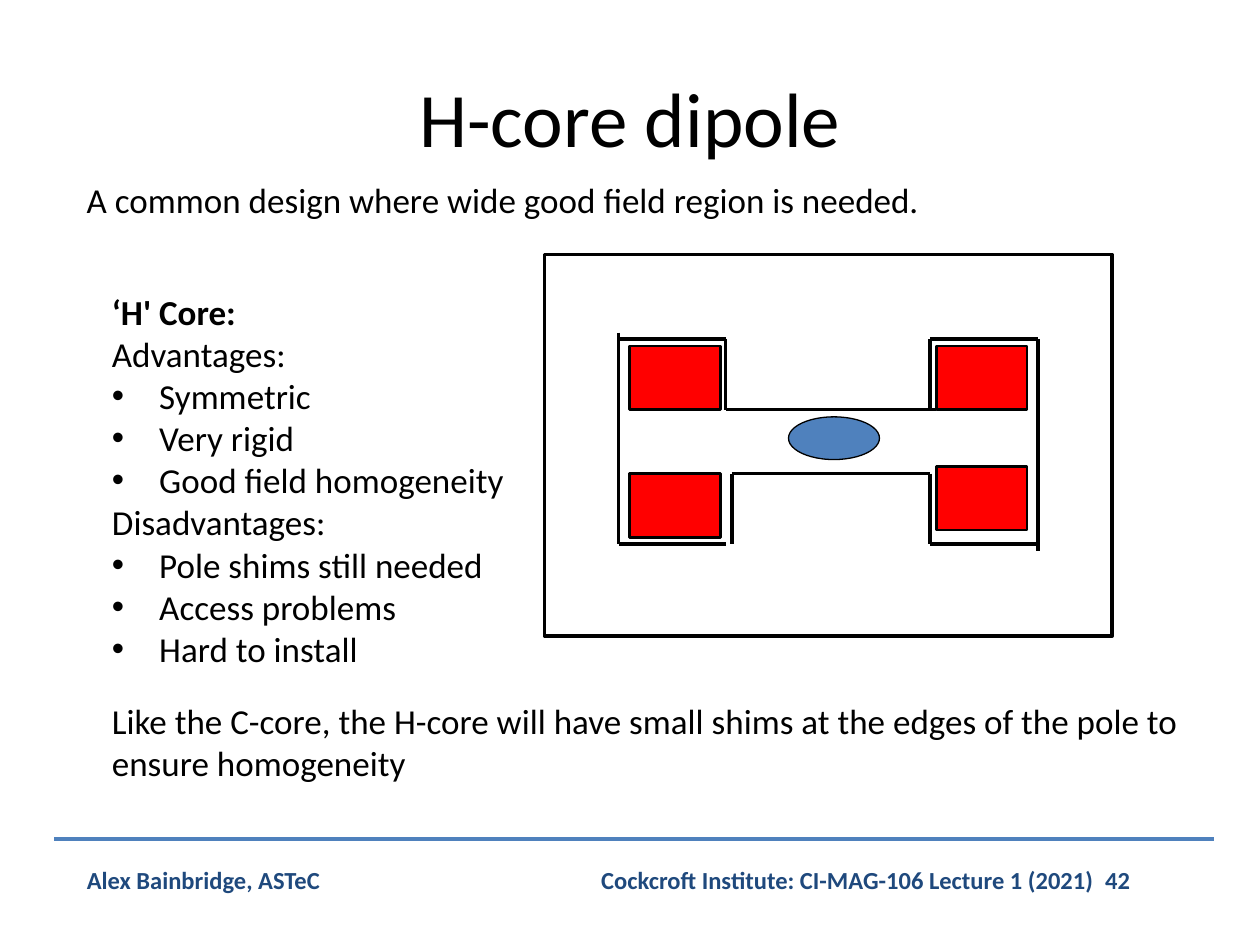
from lxml import etree
from pptx import Presentation
from pptx import util as u
from pptx.dml.color import RGBColor
from pptx.enum import shapes, text
from pptx.oxml.ns import qn

Pt = u.Pt
COLORS = {"ink": "000000", "footer": "1F497D", "accent": "4F81BD", "coil": "FF0000"}
BULLET_INDENT = Pt(27)

presentation = Presentation()
presentation.slide_width, presentation.slide_height = Pt(720), Pt(540)
slide = presentation.slides.add_slide(presentation.slide_layouts[5])


def write(frame, lines, size=20, color="ink", bold_lines=(), bullet_lines=(),
          align=text.PP_ALIGN.LEFT):
    frame.word_wrap = True
    for index, line in enumerate(lines):
        paragraph = frame.paragraphs[0] if index == 0 else frame.add_paragraph()
        paragraph.alignment = align
        run = paragraph.add_run()
        run.text = line
        run.font.name = "Calibri"
        run.font.size = Pt(size)
        run.font.bold = line in bold_lines
        run.font.color.rgb = RGBColor.from_string(COLORS[color])
        if line in bullet_lines:
            properties = paragraph._p.get_or_add_pPr()
            properties.set("marL", str(BULLET_INDENT))
            properties.set("indent", str(-BULLET_INDENT))
            etree.SubElement(properties, qn("a:buFont")).set("typeface", "Arial")
            etree.SubElement(properties, qn("a:buChar")).set("char", "•")


def draw_line(start, end, color="ink"):
    line = slide.shapes.add_connector(
        shapes.MSO_CONNECTOR.STRAIGHT, *[Pt(value) for value in (*start, *end)])
    line.line.width = Pt(2)
    line.line.color.rgb = RGBColor.from_string(COLORS[color])
    etree.SubElement(line._element.spPr, qn("a:effectLst"))


title = slide.shapes.title
title.left, title.top, title.width, title.height = Pt(36), Pt(21.6), Pt(648), Pt(90)
title.text_frame.vertical_anchor = text.MSO_ANCHOR.MIDDLE
write(title.text_frame, ["H-core dipole"], size=44, align=text.PP_ALIGN.CENTER)

advantages = ["Symmetric", "Very rigid", "Good field homogeneity"]
disadvantages = ["Pole shims still needed", "Access problems", "Hard to install"]
heading = "‘H' Core:"
author = "Alex Bainbridge, ASTeC"
lecture = "Cockcroft Institute: CI-MAG-106 Lecture 1 (2021)\t42"
footer = {"size": 14, "color": "footer", "bold_lines": [author, lecture]}

text_boxes = [
    ((42.5, 98.6, 629, 31.5),
     ["A common design where wide good field region is needed."], {}),
    ((56.9, 162.7, 278, 225.4),
     [heading, "Advantages:", *advantages, "Disadvantages:", *disadvantages],
     {"bold_lines": [heading], "bullet_lines": advantages + disadvantages}),
    ((56.9, 396, 626.4, 55.5),
     ["Like the C-core, the H-core will have small shims at the edges of the pole "
      "to ensure homogeneity"], {}),
    ((42.5, 491, 278, 24.5), [author], footer),
    ((295.2, 491, 398.9, 24.5), [lecture], {**footer, "align": text.PP_ALIGN.CENTER}),
]
for box, lines, options in text_boxes:
    text_box = slide.shapes.add_textbox(*[Pt(value) for value in box])
    write(text_box.text_frame, lines, **options)

draw_line((31, 479.5), (694, 479.5), "accent")

window_left, window_right = 353.5, 593.3
pole_left_top, pole_left_bottom, pole_right, coil_right = 414.7, 418.3, 531.4, 535
window_top, window_bottom = 193.7, 311
gap_top, gap_bottom = 234, 270.7
overshoot = 3.6

yoke_lines = [
    ((window_left, window_top - overshoot), (window_left, window_bottom)),
    ((window_right, window_top), (window_right, window_bottom + overshoot)),
    ((pole_left_top, window_top), (pole_left_top, gap_top)),
    ((pole_left_bottom, gap_bottom), (pole_left_bottom, window_bottom)),
    ((pole_left_top, gap_top), (coil_right, gap_top)),
    ((pole_left_bottom, gap_bottom), (pole_right, gap_bottom)),
]
for y in (window_top, window_bottom):
    yoke_lines.append(((window_left, y), (pole_left_top, y)))
    yoke_lines.append(((pole_right, y), (window_right, y)))
for top, bottom in ((window_top, gap_top), (gap_bottom, window_bottom)):
    yoke_lines.append(((pole_right, top), (pole_right, bottom)))

rectangle, oval = shapes.MSO_SHAPE.RECTANGLE, shapes.MSO_SHAPE.OVAL
coil_width, coil_height = 52, 36.3
coil_corners = [(359.8, 197.8), (359.8, gap_bottom),
                (coil_right, 197.8), (coil_right, 266.5)]
core_shapes = [(rectangle, (311.2, 145.4, 324.2, 218.2), None, 2)]
core_shapes += [(rectangle, (*corner, coil_width, coil_height), "coil", 1.5)
                for corner in coil_corners]
core_shapes.append((oval, (450.6, 238.2, 52, 24.4), "accent", 0.75))

for kind, box, fill, line_width in core_shapes:
    shape = slide.shapes.add_shape(kind, *[Pt(value) for value in box])
    shape.shadow.inherit = False
    if fill:
        shape.fill.solid()
        shape.fill.fore_color.rgb = RGBColor.from_string(COLORS[fill])
    else:
        shape.fill.background()
    shape.line.width = Pt(line_width)
    shape.line.color.rgb = RGBColor.from_string(COLORS["ink"])

for start, end in yoke_lines:
    draw_line(start, end)

presentation.save("out.pptx")
